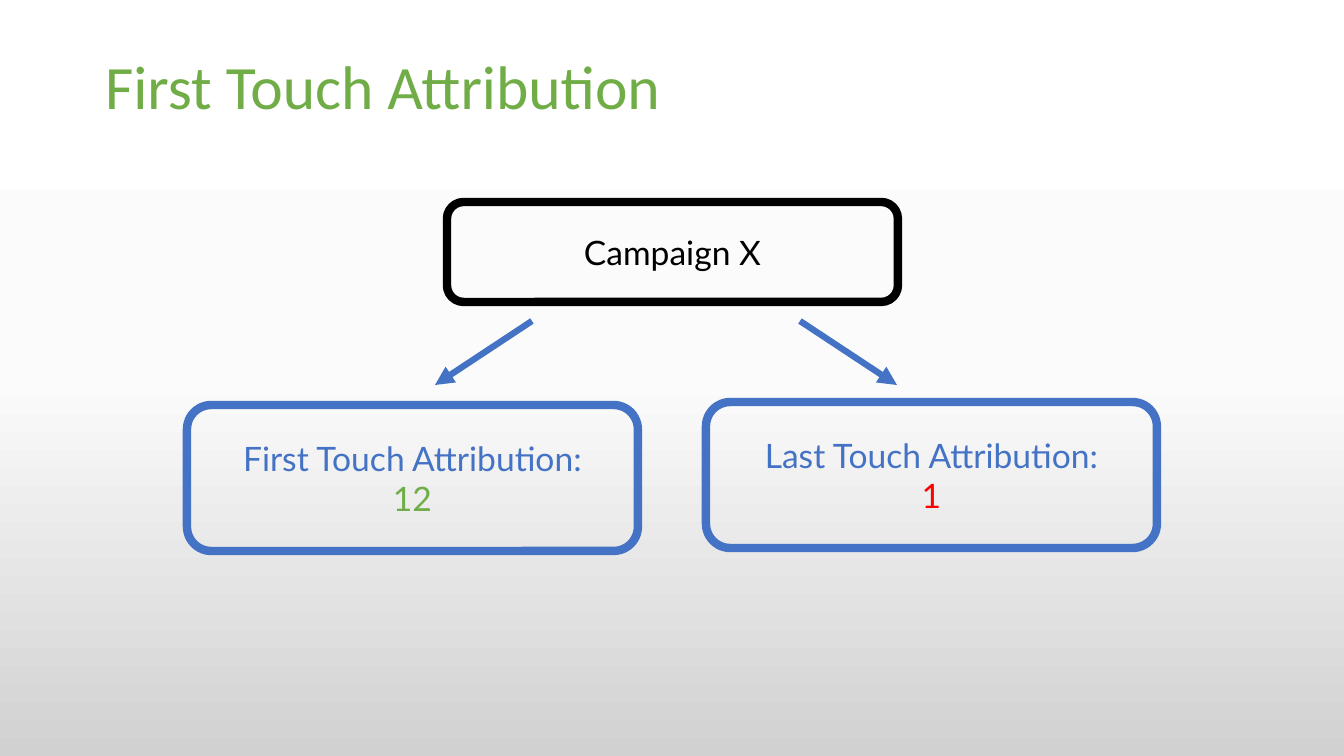
from copy import deepcopy

from lxml.etree import SubElement
from pptx import Presentation
from pptx.dml.color import RGBColor
from pptx.enum.shapes import MSO_CONNECTOR, MSO_SHAPE
from pptx.enum.text import MSO_ANCHOR, PP_ALIGN
from pptx.oxml.ns import qn
from pptx.util import Pt

PX = 914400 / 100.8
COLORS = {
    "black": "000000",
    "blue": "4472C4",
    "green": "70AD47",
    "red": "FF0000",
}
BACKGROUND = [(0, "FFFFFF"), (0.5, "FBFBFB"), (1, "D1D1D1")]


def px(*lengths):
    """Turn pixel lengths into EMU."""
    return [round(length * PX) for length in lengths]


def write(shape, lines, font="Lato", size=24, align=PP_ALIGN.CENTER,
          spacing=1.0, inset=(7, 4)):
    """Fill a shape with (text, color name) lines, one paragraph each."""
    frame = shape.text_frame
    frame.word_wrap = True
    frame.vertical_anchor = MSO_ANCHOR.MIDDLE
    side, edge = px(*inset)
    frame.margin_left = frame.margin_right = side
    frame.margin_top = frame.margin_bottom = edge
    for index, (text, color) in enumerate(lines):
        para = frame.add_paragraph() if index else frame.paragraphs[0]
        para.alignment = align
        para.line_spacing = spacing
        span = para.add_run()
        span.text = text
        span.font.name = font
        span.font.size = Pt(size)
        span.font.color.rgb = RGBColor.from_string(COLORS[color])


deck = Presentation()
deck.slide_width, deck.slide_height = px(1344, 756)
page = deck.slides.add_slide(deck.slide_layouts[6])

# Background: three gradient stops, running downwards
fill = page.background.fill
fill.gradient()
fill.gradient_angle = 270
stop_list = next(page.element.iter(qn("a:gsLst")))
stop_list.append(deepcopy(stop_list[-1]))
for stop, (position, color) in zip(fill.gradient_stops, BACKGROUND):
    stop.position = position
    stop.color.rgb = RGBColor.from_string(color)

# Campaign and its two attribution boxes
BOXES = [
    (447, 202, 100, "black", [("Campaign X", "black")]),
    (187, 405, 146, "blue",
     [("First Touch Attribution:", "blue"), ("12", "green")]),
    (706, 402, 146, "blue",
     [("Last Touch Attribution:", "blue"), ("1", "red")]),
]
for left, top, height, outline, lines in BOXES:
    box = page.shapes.add_shape(MSO_SHAPE.ROUNDED_RECTANGLE,
                                *px(left, top, 451, height))
    box.shadow.inherit = False
    box.fill.background()
    box.line.color.rgb = RGBColor.from_string(COLORS[outline])
    box.line.width = Pt(6)
    write(box, lines)

# Arrows from the campaign to each box
for start, end in [(532, 435), (800, 897)]:
    arrow = page.shapes.add_connector(MSO_CONNECTOR.STRAIGHT,
                                      *px(start, 321, end, 385))
    arrow.line.color.rgb = RGBColor.from_string(COLORS["blue"])
    arrow.line.width = Pt(4.5)
    SubElement(arrow.line._get_or_add_ln(), qn("a:tailEnd"), type="triangle")
    SubElement(arrow._element.spPr, qn("a:effectLst"))

title = page.shapes.add_textbox(*px(95, 17, 1159, 146))
write(title, [("First Touch Attribution", "green")], font="Calibri", size=44,
      align=PP_ALIGN.LEFT, spacing=0.9, inset=(10, 5))

deck.save("out.pptx")
